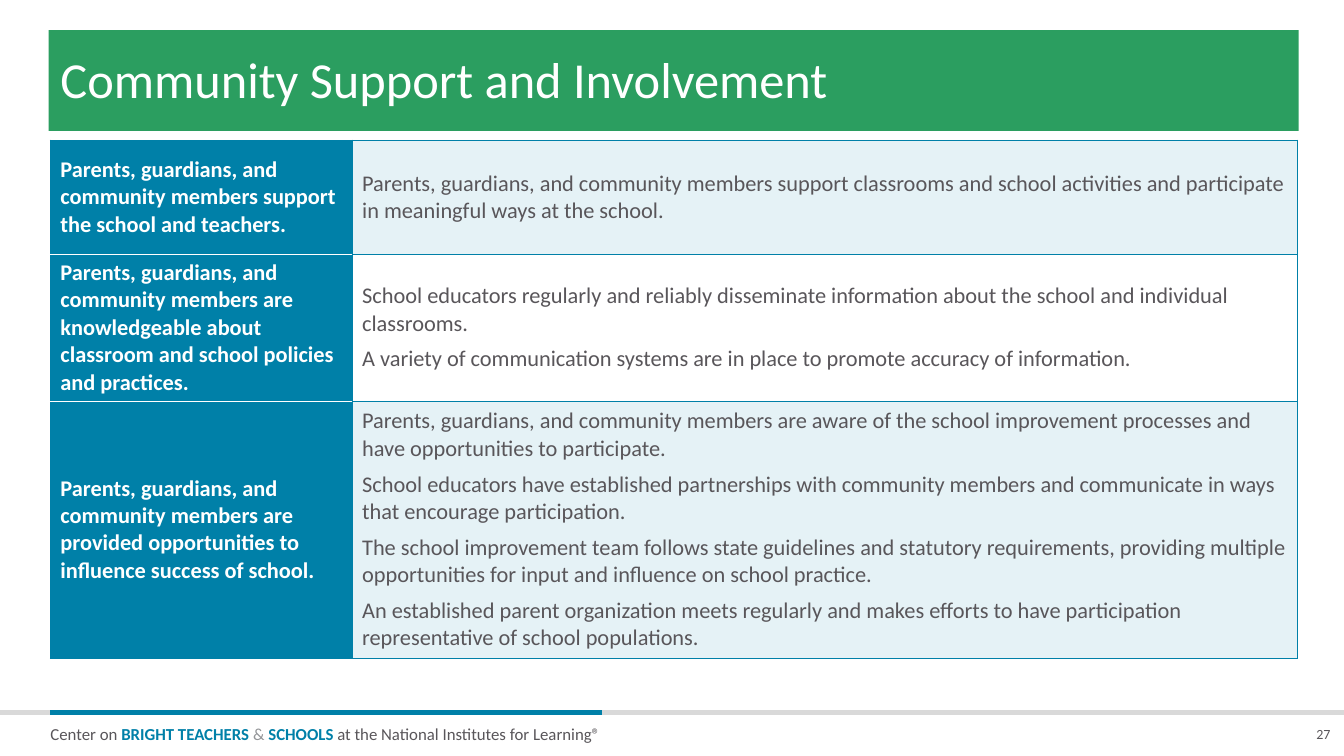
from lxml.etree import SubElement
from pptx import Presentation
from pptx.dml.color import RGBColor
from pptx.enum.shapes import MSO_CONNECTOR as Connector, MSO_SHAPE as Shape
from pptx.enum.text import MSO_ANCHOR as Anchor, MSO_AUTO_SIZE as AutoSize, PP_ALIGN as Align
from pptx.oxml import parse_xml
from pptx.oxml.ns import nsdecls, qn
from pptx.util import Pt

COLORS = {
    "blue": "0080A8",
    "green": "2B9E60",
    "pale": "E5F2F6",
    "white": "FFFFFF",
    "text": "59565A",
    "gray": "939598",
    "rule": "D9D9D9",
}

ROWS = [
    (81.4, "Parents, guardians, and community members support the school and teachers.", [
        "Parents, guardians, and community members support classrooms and school activities "
        "and participate in meaningful ways at the school.",
    ]),
    (103, "Parents, guardians, and community members are knowledgeable about classroom "
          "and school policies and practices.", [
        "School educators regularly and reliably disseminate information about the school "
        "and individual classrooms.",
        "A variety of communication systems are in place to promote accuracy of information.",
    ]),
    (183.6, "Parents, guardians, and community members are provided opportunities to "
            "influence success of school.", [
        "Parents, guardians, and community members are aware of the school improvement "
        "processes and have opportunities to participate.",
        "School educators have established partnerships with community members and "
        "communicate in ways that encourage participation.",
        "The school improvement team follows state guidelines and statutory requirements, "
        "providing multiple opportunities for input and influence on school practice.",
        "An established parent organization meets regularly and makes efforts to have "
        "participation representative of school populations.",
    ]),
]

FOOTER = [
    ("Center on ", "text", False),
    ("BRIGHT TEACHERS ", "blue", True),
    ("& ", "gray", False),
    ("SCHOOLS", "blue", True),
    (" at the National Institutes for Learning®", "text", False),
]


def color(name):
    return RGBColor.from_string(COLORS[name])


def add_span(para, text, size=16, ink="text", bold=False, font="Calibri"):
    span = para.add_run()
    span.text = text
    span.font.name = font
    span.font.size = Pt(size)
    span.font.bold = bold
    span.font.color.rgb = color(ink)


class SlideBuilder:
    def __init__(self, deck):
        self.page = deck.slides.add_slide(deck.slide_layouts[5])
        self.shapes = self.page.shapes

    def place(self, shape, left, top, width, height):
        shape.left, shape.top = Pt(left), Pt(top)
        shape.width, shape.height = Pt(width), Pt(height)

    def frame(self, box, anchor, left_inset=0):
        frame = box.text_frame
        frame.word_wrap = True
        frame.auto_size = AutoSize.NONE
        frame.vertical_anchor = anchor
        frame.margin_left = Pt(left_inset)
        frame.margin_top = frame.margin_right = frame.margin_bottom = 0
        return frame.paragraphs[0]

    def rectangle(self, left, top, width, height, fill):
        box = self.shapes.add_shape(Shape.RECTANGLE, Pt(left), Pt(top), Pt(width), Pt(height))
        box.shadow.inherit = False
        box.fill.solid()
        box.fill.fore_color.rgb = color(fill)
        box.line.fill.background()
        return box

    def title(self, text, left, top, width, height):
        box = self.shapes.title
        self.place(box, left, top, width, height)
        para = self.frame(box, Anchor.BOTTOM, left_inset=7.2)
        para.alignment = Align.LEFT
        para.line_spacing = 0.9
        add_span(para, text, size=36, ink="white")
        return box

    def line(self, start, end, y, ink):
        line = self.shapes.add_connector(Connector.STRAIGHT, Pt(start), Pt(y), Pt(end), Pt(y))
        line.line.color.rgb = color(ink)
        line.line.width = Pt(3)
        SubElement(line._element.spPr, qn("a:effectLst"))

    def label(self, spans, left, top, width, height, size, align=Align.LEFT,
              anchor=Anchor.TOP, spacing=1.0):
        box = self.shapes.add_textbox(Pt(left), Pt(top), Pt(width), Pt(height))
        para = self.frame(box, anchor)
        para.alignment = align
        para.line_spacing = spacing
        for text, ink, bold in spans:
            add_span(para, text, size=size, ink=ink, bold=bold)

    def cell(self, cell, texts, fill, borders, ink="text", bold=False, before=0):
        cell.vertical_anchor = Anchor.MIDDLE
        cell.fill.solid()
        cell.fill.fore_color.rgb = color(fill)
        frame = cell.text_frame
        for index, text in enumerate(texts):
            para = frame.add_paragraph() if index else frame.paragraphs[0]
            para.space_before = Pt(before)
            add_span(para, text, ink=ink, bold=bold)
        properties = cell._tc.get_or_add_tcPr()
        for index, (side, name) in enumerate(zip("LRTB", borders)):
            properties.insert(index, parse_xml(
                f'<a:ln{side} {nsdecls("a")} w="{Pt(0.75)}"><a:solidFill>'
                f'<a:srgbClr val="{COLORS[name]}"/></a:solidFill></a:ln{side}>'))

    def table(self, rows, left, top, widths):
        height = sum(row[0] for row in rows)
        table = self.shapes.add_table(len(rows), len(widths), Pt(left), Pt(top),
                                      Pt(sum(widths)), Pt(height)).table
        table.first_row = table.horz_banding = False
        for column, width in zip(table.columns, widths):
            column.width = Pt(width)
        last = len(rows) - 1
        for index, (row_height, heading, details) in enumerate(rows):
            table.rows[index].height = Pt(row_height)
            above = "white" if index else "blue"
            below = "white" if index < last else "blue"
            self.cell(table.cell(index, 0), [heading], "blue",
                      ("blue", "blue", above, below), ink="white", bold=True)
            self.cell(table.cell(index, 1), details, "white" if index % 2 else "pale",
                      ("blue",) * 4, before=6)


def main():
    deck = Presentation()
    deck.slide_width, deck.slide_height = Pt(960), Pt(540)
    slide = SlideBuilder(deck)

    title = slide.title("Community Support and Involvement", 36, 0, 892.8, 78.5)
    band = slide.rectangle(34.8, 21.6, 892.8, 72, "green")
    title._element.addprevious(band._element)

    slide.table(ROWS, 36, 100.1, (215.5, 675.5))

    slide.line(0, 960, 509, "rule")
    slide.line(36, 430, 509, "blue")
    slide.label(FOOTER, 36, 513.4, 430, 16.6, size=12, spacing=1.25)
    slide.label([("27", "text", False)], 938, 518.4, 12.4, 12.2, size=10,
                align=Align.RIGHT, anchor=Anchor.BOTTOM)
    deck.save("out.pptx")


if __name__ == "__main__":
    main()
